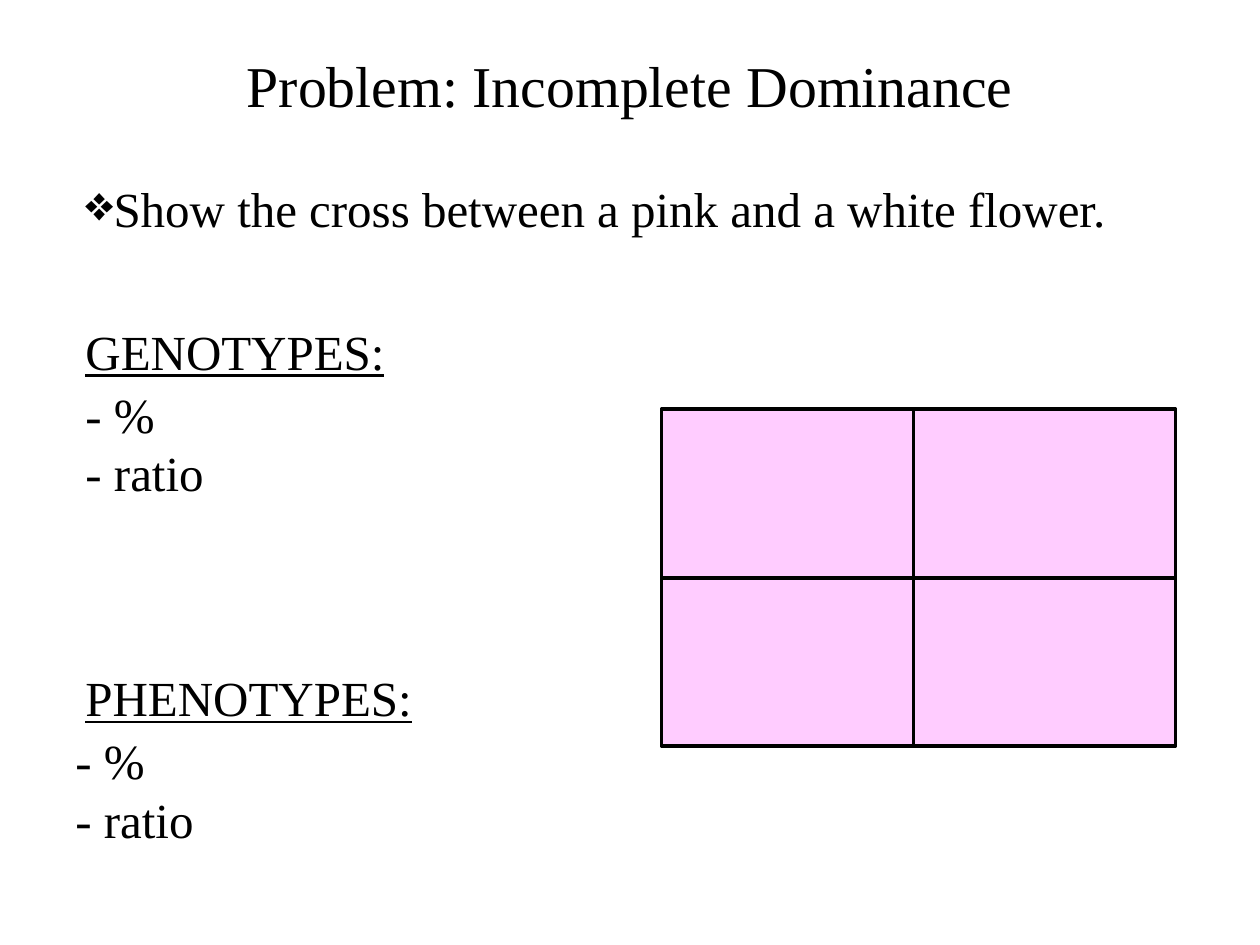
import pptx
import pptx.dml.color
import pptx.enum.shapes
import pptx.enum.text
import pptx.oxml.ns
import pptx.util
from lxml import etree

Inches = pptx.util.Inches
Pt = pptx.util.Pt
ALIGN = pptx.enum.text.PP_ALIGN
ANCHOR = pptx.enum.text.MSO_ANCHOR

FONT = "Times New Roman"
BLACK = "000000"
PINK = "FFCCFF"
LINE_WIDTH = 2.25

TITLE = "Problem: Incomplete Dominance"
TASK = "Show the cross between a pink and a white flower."
ANSWERS = "- %\n- ratio"

# text, (left, top, width, height), format
TEXTS = [
    (TITLE, (0.75, 0.08, 8.5, 1.25),
     dict(size=33, align=ALIGN.CENTER, anchor=ANCHOR.MIDDLE, line_spacing=0.9)),
    (TASK, (0.58, 1.42, 9, 1),
     dict(bullet="❖", indent=0.19, line_spacing=0.9, space_before=7.5)),
    (ANSWERS, (0.58, 3, 3.75, 1.04), {}),
    (ANSWERS, (0.5, 5.75, 1.25, 1.04), dict(wrap=False)),
    ("GENOTYPES:", (0.58, 2.5, 2.58, 0.57), dict(underline=True)),
    ("PHENOTYPES:", (0.58, 5.25, 2.8, 0.57), dict(underline=True, wrap=False)),
]

SQUARE = (5.25, 3.25, 4.08, 2.67)
COLUMN_SPLIT = 7.25


def color(value):
    return pptx.dml.color.RGBColor.from_string(value)


def add_bullet(para, char, indent):
    """Give the paragraph a bullet that hangs by the indent."""
    properties = para._p.get_or_add_pPr()
    properties.set("marL", str(Inches(indent)))
    properties.set("indent", str(-Inches(indent)))
    mark = etree.SubElement(properties, pptx.oxml.ns.qn("a:buChar"))
    mark.set("char", char)


def add_text(page, text, place, size=28, align=ALIGN.LEFT, anchor=ANCHOR.TOP,
             line_spacing=None, space_before=None, bullet=None, indent=0,
             underline=None, wrap=True):
    box = page.shapes.add_textbox(*map(Inches, place))
    frame = box.text_frame
    frame.word_wrap = wrap
    frame.vertical_anchor = anchor
    for number, line in enumerate(text.split("\n")):
        para = frame.add_paragraph() if number else frame.paragraphs[0]
        para.alignment = align
        if line_spacing:
            para.line_spacing = line_spacing
        if space_before:
            para.space_before = Pt(space_before)
        if bullet:
            add_bullet(para, bullet, indent)
        span = para.add_run()
        span.text = line
        span.font.name = FONT
        span.font.size = Pt(size)
        span.font.underline = underline
        span.font.color.rgb = color(BLACK)


def style_line(shape):
    shape.line.color.rgb = color(BLACK)
    shape.line.width = Pt(LINE_WIDTH)


def add_divider(page, start, end):
    divider = page.shapes.add_connector(
        pptx.enum.shapes.MSO_CONNECTOR.STRAIGHT, *map(Inches, start + end))
    style_line(divider)
    etree.SubElement(divider._element.spPr, pptx.oxml.ns.qn("a:effectLst"))
    return divider


def add_punnett_square(page):
    left, top, width, height = SQUARE
    right, bottom, middle = left + width, top + height, top + height / 2
    square = page.shapes.add_shape(
        pptx.enum.shapes.MSO_SHAPE.RECTANGLE, *map(Inches, SQUARE))
    square.shadow.inherit = False
    square.fill.solid()
    square.fill.fore_color.rgb = color(PINK)
    style_line(square)

    add_divider(page, (COLUMN_SPLIT, top), (COLUMN_SPLIT, bottom))
    row_divider = add_divider(page, (left, middle), (right, middle))
    row_divider.begin_connect(square, 1)
    row_divider.end_connect(square, 3)


def main():
    deck = pptx.Presentation()
    deck.slide_width, deck.slide_height = Inches(10), Inches(7.5)
    page = deck.slides.add_slide(deck.slide_layouts[6])
    add_punnett_square(page)
    for text, place, style in TEXTS:
        add_text(page, text, place, **style)
    deck.save("out.pptx")


if __name__ == "__main__":
    main()
